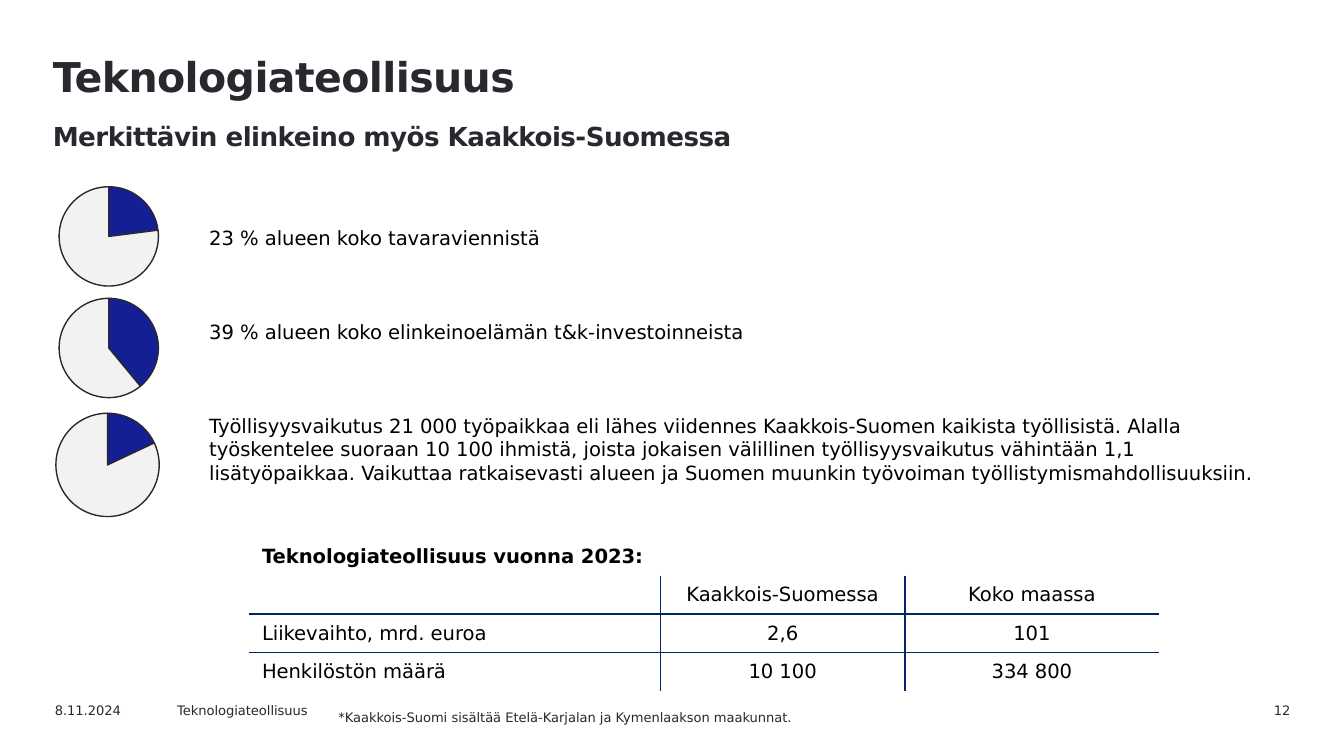
import pptx
import pptx.chart.data
import pptx.dml.color
import pptx.enum.chart
import pptx.enum.text
import pptx.oxml
import pptx.oxml.ns
import pptx.util
from dataclasses import dataclass
from lxml import etree

Pt = pptx.util.Pt
qn = pptx.oxml.ns.qn
ALIGN = pptx.enum.text.PP_ALIGN
FONT = "DejaVu Sans"
INK, BLACK, NAVY, BLUE, PALE = "29282E", "000000", "002664", "141F94", "F2F2F2"


@dataclass
class Run:
    text: str
    size: float
    color: str = INK
    bold: bool = False
    spacing: int = 0


@dataclass
class Box:
    x: float
    y: float
    w: float
    h: float
    paragraphs: list
    align: int = ALIGN.LEFT
    gap: float = 0
    line: float = 0


@dataclass
class Pie:
    x: float
    y: float
    size: float
    share: int


def rgb(value: str) -> pptx.dml.color.RGBColor:
    return pptx.dml.color.RGBColor.from_string(value)


def style_font(font, size: float, color: str, bold: bool = False) -> None:
    font.name = FONT
    font.size = Pt(size)
    font.bold = bold
    font.color.rgb = rgb(color)


def add_run(p, run: Run) -> None:
    r = p.add_run()
    r.text = run.text
    style_font(r.font, run.size, run.color, run.bold)
    if run.spacing:
        r.font._element.set("spc", str(run.spacing))


def add_box(s, box: Box) -> None:
    sp = s.shapes.add_textbox(Pt(box.x), Pt(box.y), Pt(box.w), Pt(box.h))
    tf = sp.text_frame
    tf.word_wrap = True
    for i, runs in enumerate(box.paragraphs):
        p = tf.paragraphs[0] if i == 0 else tf.add_paragraph()
        p.alignment = box.align
        if i and box.gap:
            p.space_before = Pt(box.gap)
        if box.line:
            p.line_spacing = Pt(box.line)
        for j, run in enumerate(runs):
            if j:
                p.add_line_break()
            add_run(p, run)


def add_pie(s, pie: Pie) -> None:
    data = pptx.chart.data.CategoryChartData()
    data.categories = ["1", "2"]
    data.add_series("Series 1", (pie.share, 100 - pie.share))
    chart = s.shapes.add_chart(
        pptx.enum.chart.XL_CHART_TYPE.PIE,
        Pt(pie.x), Pt(pie.y), Pt(pie.size), Pt(pie.size), data).chart
    chart.has_legend = False
    chart.has_title = False
    style_font(chart.font, 18, INK)
    plot = chart.plots[0]
    plot.vary_by_categories = False
    for i, color in enumerate((BLUE, PALE)):
        fmt = plot.series[0].points[i].format
        fmt.fill.solid()
        fmt.fill.fore_color.rgb = rgb(color)
        fmt.line.color.rgb = rgb(INK)
        fmt.line.width = Pt(0.75)
    area = plot._element.getparent()
    for old in area.findall(qn("c:layout")):
        area.remove(old)
    layout = etree.Element(qn("c:layout"))
    manual = etree.SubElement(layout, qn("c:manualLayout"))
    for tag, value in (("layoutTarget", "inner"), ("xMode", "edge"), ("yMode", "edge"),
                       ("x", "0.13"), ("y", "0.13"), ("w", "0.74"), ("h", "0.74")):
        etree.SubElement(manual, qn(f"c:{tag}")).set("val", value)
    area.insert(0, layout)


def set_borders(cell, sides: str) -> None:
    tc_pr = cell._tc.get_or_add_tcPr()
    for i, side in enumerate("LRTB"):
        ln = etree.Element(qn(f"a:ln{side}"), w=str(Pt(1)))
        if side in sides:
            fill = etree.SubElement(ln, qn("a:solidFill"))
            etree.SubElement(fill, qn("a:srgbClr"), val=NAVY)
        else:
            etree.SubElement(ln, qn("a:noFill"))
        tc_pr.insert(i, ln)


def add_table(s, x: float, y: float, widths: list, row_h: float, rows: list) -> None:
    n, m = len(rows), len(widths)
    table = s.shapes.add_table(n, m, Pt(x), Pt(y), Pt(sum(widths)), Pt(row_h * n)).table
    table.first_row = False
    table.horz_banding = False
    for col, width in zip(table.columns, widths):
        col.width = Pt(width)
    for i, texts in enumerate(rows):
        table.rows[i].height = Pt(row_h)
        for j, text in enumerate(texts):
            cell = table.cell(i, j)
            cell.vertical_anchor = pptx.enum.text.MSO_ANCHOR.MIDDLE
            cell.fill.background()
            sides = ""
            if i:
                sides = ("L" if j else "") + ("R" if j < m - 1 else "")
                sides += ("T" if i > 1 else "") + ("B" if i < n - 1 else "")
            set_borders(cell, sides)
            p = cell.text_frame.paragraphs[0]
            p.alignment = ALIGN.CENTER if j else ALIGN.LEFT
            if text:
                add_run(p, Run(text, 10.5, BLACK, bold=i == 0))
            else:
                etree.SubElement(p._p, qn("a:endParaRPr"), sz="1050")
    table.cell(0, 0).merge(table.cell(0, m - 1))


BODY = [
    "23 % alueen koko tavaraviennistä",
    "39 % alueen koko elinkeinoelämän t&k-investoinneista",
    "Työllisyysvaikutus 21 000 työpaikkaa eli lähes viidennes Kaakkois-Suomen kaikista "
    "työllisistä. Alalla työskentelee suoraan 10 100 ihmistä, joista jokaisen välillinen "
    "työllisyysvaikutus vähintään 1,1 lisätyöpaikkaa. Vaikuttaa ratkaisevasti alueen ja "
    "Suomen muunkin työvoiman työllistymismahdollisuuksiin.",
]
TITLE = [
    Run("Teknologiateollisuus", 22, bold=True, spacing=-30),
    Run("Merkittävin elinkeino myös Kaakkois-Suomessa", 14, bold=True, spacing=-30),
]
BOXES = [
    Box(21.2, 23.5, 629, 51, [TITLE], line=27),
    Box(630.7, 372.6, 67.7, 13, [[Run("12", 7)]], ALIGN.RIGHT),
    Box(22.3, 372.6, 72, 13, [[Run("8.11.2024", 7)]]),
    Box(87.8, 372.6, 102.2, 13, [[Run("Teknologiateollisuus", 7)]]),
    Box(105, 117.4, 589.7, 174.2, [[Run(text, 10.5, BLACK)] for text in BODY], gap=37.8),
    Box(174.2, 376.6, 490.3, 12.2,
        [[Run("*Kaakkois-Suomi sisältää Etelä-Karjalan ja Kymenlaakson maakunnat.", 7)]]),
]
PIES = [Pie(22.3, 90.7, 72, 23), Pie(22.3, 150.5, 72, 39), Pie(20.2, 211.7, 74.9, 18)]
ROWS = [
    ["Teknologiateollisuus vuonna 2023:", "", ""],
    ["", "Kaakkois-Suomessa", "Koko maassa"],
    ["Liikevaihto, mrd. euroa", "2,6", "101"],
    ["Henkilöstön määrä", "10 100", "334 800"],
]


def main() -> None:
    prs = pptx.Presentation()
    prs.slide_width, prs.slide_height = Pt(720), Pt(405)
    s = prs.slides.add_slide(prs.slide_layouts[6])
    for box in BOXES:
        add_box(s, box)
    for pie in PIES:
        add_pie(s, pie)
    add_table(s, 133.2, 288, [220.6, 131, 136.1], 20.53, ROWS)
    prs.save("out.pptx")


if __name__ == "__main__":
    main()
